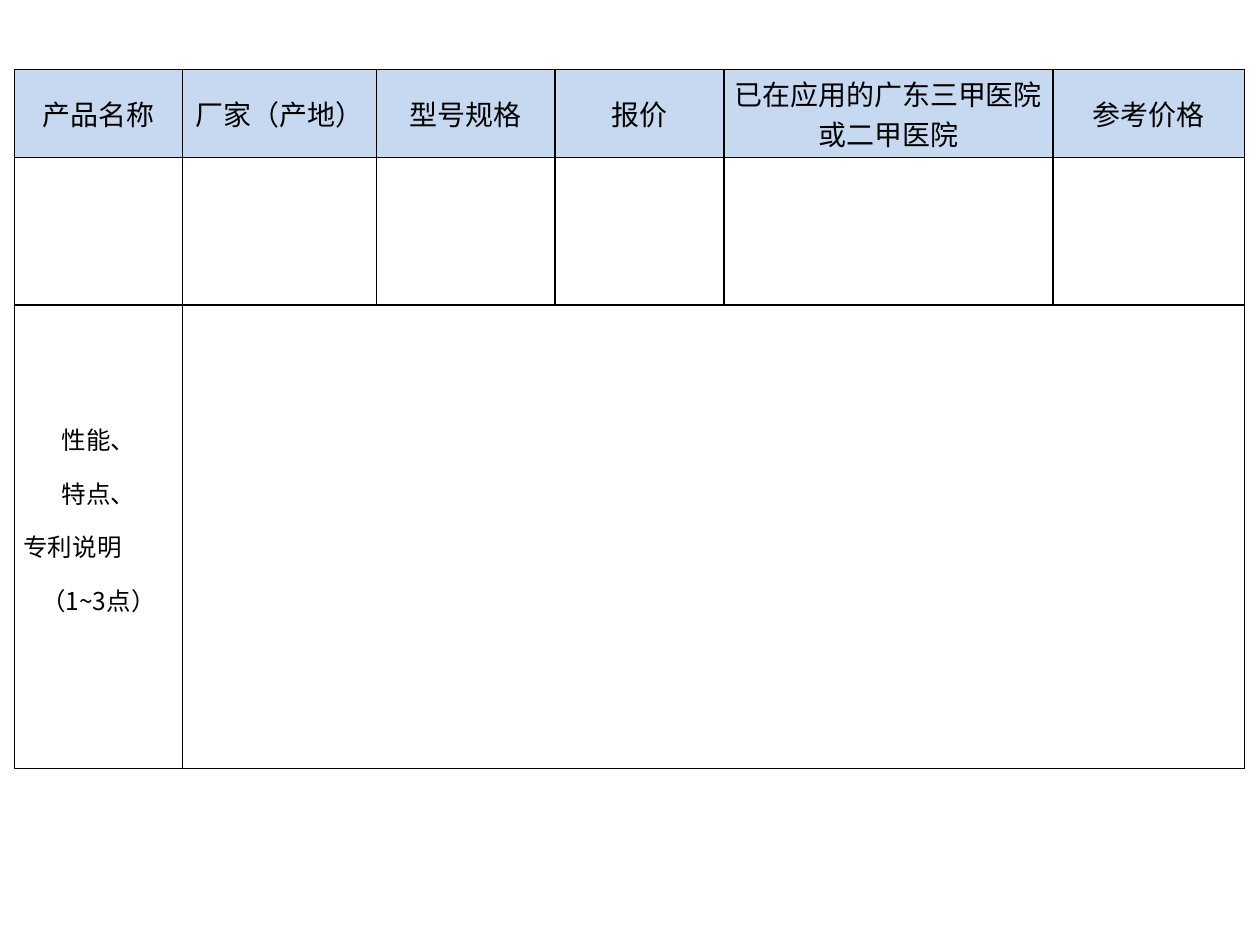
from lxml.etree import SubElement
from pptx import Presentation
from pptx.dml.color import RGBColor
from pptx.enum.text import MSO_ANCHOR, PP_ALIGN
from pptx.oxml.ns import qn
from pptx.util import Pt

BLACK = RGBColor(0, 0, 0)
BLUE = RGBColor(0xC6, 0xD9, 0xF1)
FONT = "Noto Sans CJK SC"
COLS = [95.8, 110.9, 102.2, 96.5, 187.9, 109.4]
ROWS = [50.4, 84.2, 265]
HEADS = ["产品名称", "厂家（产地）", "型号规格", "报价",
         "已在应用的广东三甲医院或二甲医院", "参考价格"]
NOTES = [("性能、", PP_ALIGN.CENTER), ("特点、", PP_ALIGN.CENTER),
         ("专利说明", PP_ALIGN.LEFT), ("（1~3点）", PP_ALIGN.CENTER)]


def frame(cell):
    """Give a cell black borders on all sides, before its fill."""
    props = cell._tc.get_or_add_tcPr()
    for side in ("a:lnL", "a:lnR", "a:lnT", "a:lnB"):
        line = SubElement(props, qn(side), w=str(Pt(1)))
        fill = SubElement(line, qn("a:solidFill"))
        SubElement(fill, qn("a:srgbClr"), val=str(BLACK))


def write(cell, lines, size, gap=1.0, foot=0):
    cell.vertical_anchor = MSO_ANCHOR.MIDDLE
    cell.margin_left = cell.margin_right = Pt(5)
    cell.margin_top, cell.margin_bottom = Pt(0), Pt(foot)
    body = cell.text_frame
    for i, (text, align) in enumerate(lines):
        para = body.add_paragraph() if i else body.paragraphs[0]
        para.alignment = align
        para.line_spacing = gap
        run = para.add_run()
        run.text = text
        run.font.size = Pt(size)
        run.font.name = FONT
        run.font.color.rgb = BLACK
        SubElement(run.font._element, qn("a:ea"), typeface=FONT)


def add_form(slide, left, top, cols, rows):
    shape = slide.shapes.add_table(len(rows), len(cols), Pt(left), Pt(top),
                                   Pt(sum(cols)), Pt(sum(rows)))
    table = shape.table
    table.first_row = table.horz_banding = False
    for col, width in zip(table.columns, cols):
        col.width = Pt(width)
    for row, height in zip(table.rows, rows):
        row.height = Pt(height)
    for cell in table.iter_cells():
        frame(cell)
        cell.fill.background()
    for i, head in enumerate(HEADS):
        cell = table.cell(0, i)
        cell.fill.solid()
        cell.fill.fore_color.rgb = BLUE
        write(cell, [(head, PP_ALIGN.CENTER)], 16)
    write(table.cell(2, 0), NOTES, 14, gap=1.5, foot=30)
    table.cell(2, 1).merge(table.cell(2, len(cols) - 1))


def main():
    deck = Presentation()
    deck.slide_width, deck.slide_height = Pt(720), Pt(540)
    slide = deck.slides.add_slide(deck.slide_layouts[6])
    add_form(slide, 8.4, 39.6, COLS, ROWS)
    deck.save("out.pptx")


if __name__ == "__main__":
    main()
